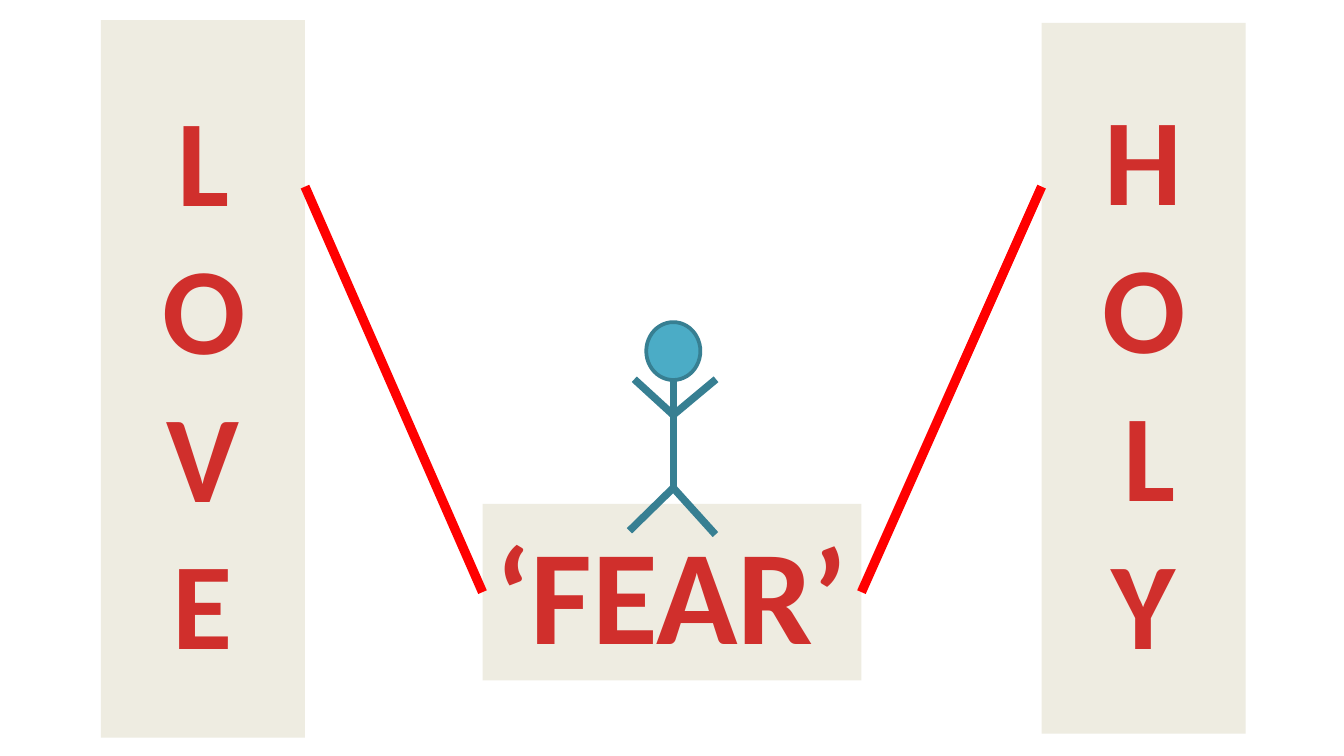
"""Build a slide with LOVE and HOLY pillars holding up a stick figure standing on FEAR."""
import dataclasses

import lxml.etree
import pptx
import pptx.dml.color
import pptx.enum.shapes
import pptx.enum.text
import pptx.oxml.ns
import pptx.util

Pt = pptx.util.Pt
RGB = pptx.dml.color.RGBColor.from_string


@dataclasses.dataclass(frozen=True)
class Theme:
    font: str = "Calibri"
    panel: str = "EEECE1"
    text: str = "D02F2C"
    rope: str = "FF0000"
    skin: str = "4BACC6"
    outline: str = "377F92"
    pillar_size: int = 66
    base_size: int = 72


theme = Theme()


def add_line(shapes, x1, y1, x2, y2, color, width):
    """Add a straight line without a shadow."""
    straight = pptx.enum.shapes.MSO_CONNECTOR.STRAIGHT
    line = shapes.add_connector(straight, Pt(x1), Pt(y1), Pt(x2), Pt(y2))
    line.line.color.rgb = RGB(color)
    line.line.width = Pt(width)
    lxml.etree.SubElement(line._element.spPr, pptx.oxml.ns.qn("a:effectLst"))
    return line


prs = pptx.Presentation()
prs.slide_width, prs.slide_height = Pt(720), Pt(405)
s = prs.slides.add_slide(prs.slide_layouts[6])

panels = {}
for word, x, y, w, h, size, vertical in (
    ("LOVE", 54, 10.8, 109.4, 384.5, theme.pillar_size, True),
    ("HOLY", 558, 12.2, 109.4, 380.9, theme.pillar_size, True),
    ("‘FEAR’", 258.5, 270, 203, 94.5, theme.base_size, False),
):
    sp = s.shapes.add_textbox(Pt(x), Pt(y), Pt(w), Pt(h))
    sp.fill.solid()
    sp.fill.fore_color.rgb = RGB(theme.panel)
    tf = sp.text_frame
    tf.word_wrap = False
    tf.auto_size = pptx.enum.text.MSO_AUTO_SIZE.SHAPE_TO_FIT_TEXT
    if vertical:
        tf._txBody.bodyPr.set("vert", "wordArtVert")
    p = tf.paragraphs[0]
    p.alignment = pptx.enum.text.PP_ALIGN.CENTER
    r = p.add_run()
    r.text = word
    r.font.name = theme.font
    r.font.size = Pt(size)
    r.font.bold = True
    r.font.color.rgb = RGB(theme.text)
    panels[word] = sp

for x1, x2, side in ((163.4, 258.5, 1), (558, 461.5, 3)):
    rope = add_line(s.shapes, x1, 100, x2, 317.2, theme.rope, 5)
    rope.end_connect(panels["‘FEAR’"], side)

figure = s.shapes.add_group_shape()
head = figure.shapes.add_shape(
    pptx.enum.shapes.MSO_SHAPE.OVAL, Pt(346.2), Pt(172.6), Pt(29), Pt(31)
)
head.shadow.inherit = False
head.fill.solid()
head.fill.fore_color.rgb = RGB(theme.skin)
head.line.color.rgb = RGB(theme.outline)
head.line.width = Pt(2)

spine = 360.7
for x1, y1, x2, y2 in (
    (spine, 203.2, spine, 264),
    (383.6, 203.2, spine, 222.3),
    (spine, 222.3, 339.8, 203.2),
    (spine, 261.4, 337.2, 284.4),
    (383.3, 286.4, spine, 261.4),
):
    add_line(figure.shapes, x1, y1, x2, y2, theme.outline, 4)

prs.save("out.pptx")
